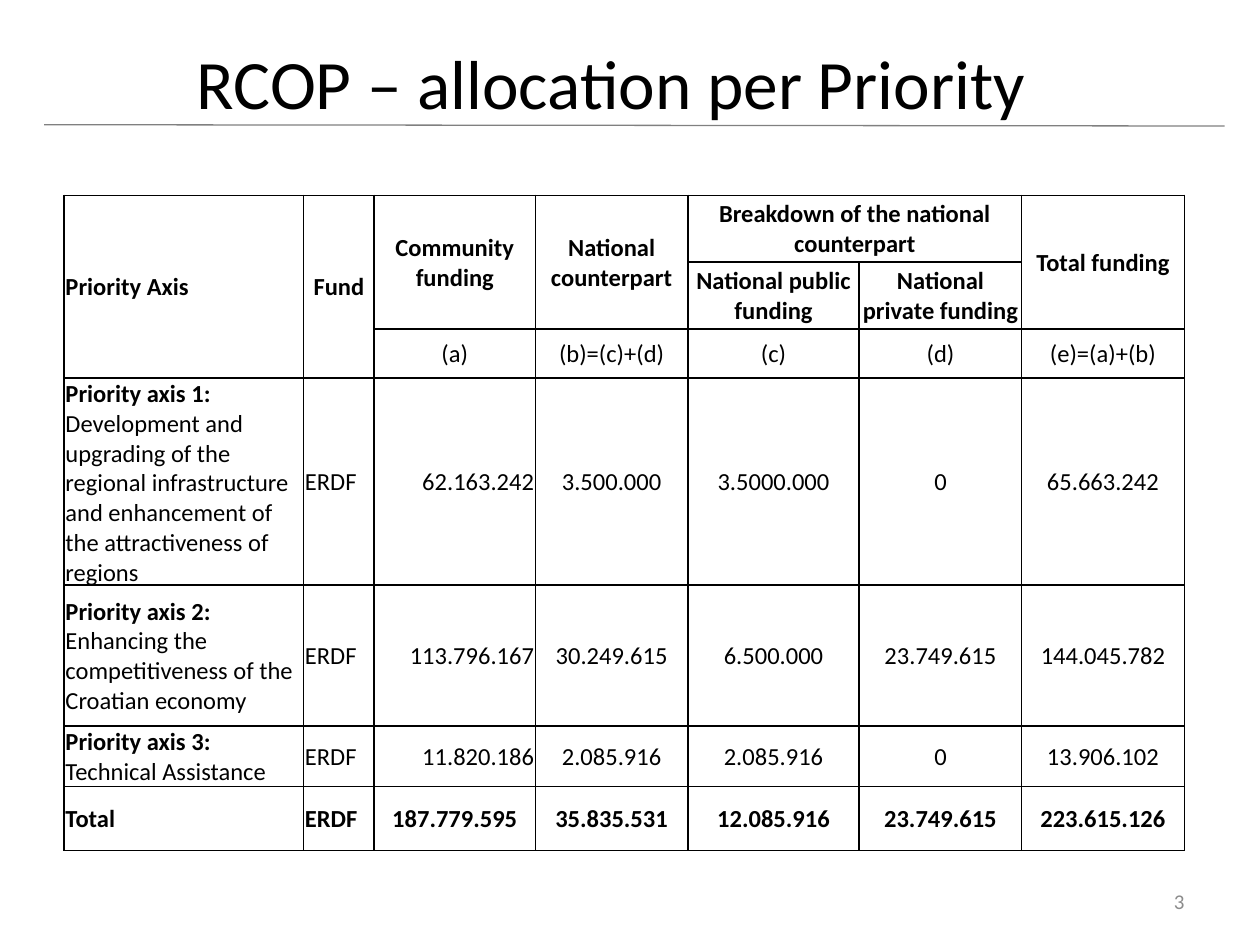
import pptx
import pptx.dml.color
import pptx.enum.shapes
import pptx.enum.text
import pptx.oxml
import pptx.oxml.ns
import pptx.util
from pptx.util import Inches

Align = pptx.enum.text.PP_ALIGN
BLACK = pptx.dml.color.RGBColor(0x00, 0x00, 0x00)
GRAY = pptx.dml.color.RGBColor(0x80, 0x80, 0x80)
NUMBER_GRAY = pptx.dml.color.RGBColor(0x8C, 0x8C, 0x8C)
FONT = "Calibri"

TITLE = "RCOP – allocation per Priority"
SLIDE_NUMBER = "3"

# Header cells: row, column, rows spanned, columns spanned, label
HEADERS = [
    (0, 0, 3, 1, "Priority Axis"),
    (0, 1, 3, 1, "Fund"),
    (0, 2, 2, 1, "Community funding"),
    (0, 3, 2, 1, "National counterpart"),
    (0, 4, 1, 2, "Breakdown of the national counterpart"),
    (0, 6, 2, 1, "Total funding"),
    (1, 4, 1, 1, "National public funding"),
    (1, 5, 1, 1, "National private funding"),
]
FORMULAS = ["(a)", "(b)=(c)+(d)", "(c)", "(d)", "(e)=(a)+(b)"]
# Axis label, axis description, fund, then amounts (a) to (e)
AXES = [
    ("Priority axis 1: ",
     "Development and upgrading of the regional infrastructure and "
     "enhancement of the attractiveness of regions",
     "ERDF", "62.163.242", "3.500.000", "3.5000.000", "0", "65.663.242"),
    ("Priority axis 2: ",
     "Enhancing the competitiveness of the Croatian economy",
     "ERDF", "113.796.167", "30.249.615", "6.500.000", "23.749.615", "144.045.782"),
    ("Priority axis 3: ", "Technical Assistance",
     "ERDF", "11.820.186", "2.085.916", "2.085.916", "0", "13.906.102"),
]
TOTALS = ["Total", "ERDF", "187.779.595", "35.835.531", "12.085.916",
          "23.749.615", "223.615.126"]
COLUMN_WIDTHS = [1.9, 0.56, 1.28, 1.21, 1.36, 1.29, 1.29]
ROW_HEIGHTS = [0.53, 0.53, 0.39, 1.49, 1.12, 0.44, 0.51]
FIRST_AXIS_ROW, TOTAL_ROW = 3, 6


def write(frame, text, size=14, color=BLACK, bold=False, align=Align.CENTER):
    """Add a run to the frame's first paragraph and format it."""
    paragraph = frame.paragraphs[0]
    paragraph.alignment = align
    run = paragraph.add_run()
    run.text = text
    run.font.name = FONT
    run.font.size = pptx.util.Pt(size)
    run.font.bold = bold
    run.font.color.rgb = color


def add_text(slide, text, left, top, width, height, **style):
    frame = slide.shapes.add_textbox(
        Inches(left), Inches(top), Inches(width), Inches(height)).text_frame
    frame.word_wrap = True
    frame.vertical_anchor = pptx.enum.text.MSO_ANCHOR.MIDDLE
    write(frame, text, **style)


def add_rule(slide):
    rule = slide.shapes.add_connector(
        pptx.enum.shapes.MSO_CONNECTOR.STRAIGHT,
        Inches(0.35), Inches(0.99), Inches(9.72), Inches(1))
    rule.line.color.rgb = GRAY
    rule.line.width = pptx.util.Pt(0.75)
    properties = rule._element.spPr
    properties.append(properties.makeelement(pptx.oxml.ns.qn("a:effectLst"), {}))


def style_cell(cell):
    """Give a cell thin black borders, tight margins and no fill."""
    properties = cell._tc.get_or_add_tcPr()
    for side in ("lnL", "lnR", "lnT", "lnB"):
        properties.append(pptx.oxml.parse_xml(
            f'<a:{side} {pptx.oxml.ns.nsdecls("a")} w="{pptx.util.Pt(1)}">'
            f'<a:solidFill><a:srgbClr val="{BLACK}"/></a:solidFill></a:{side}>'))
    cell.fill.background()
    cell.margin_left = cell.margin_right = cell.margin_top = Inches(0.01)
    cell.margin_bottom = 0
    cell.vertical_anchor = pptx.enum.text.MSO_ANCHOR.MIDDLE


def add_allocation_table(slide):
    table = slide.shapes.add_table(
        len(ROW_HEIGHTS), len(COLUMN_WIDTHS), Inches(0.51), Inches(1.55),
        Inches(sum(COLUMN_WIDTHS)), Inches(sum(ROW_HEIGHTS))).table
    table.first_row = table.horz_banding = False
    for column, width in zip(table.columns, COLUMN_WIDTHS):
        column.width = Inches(width)
    for row, height in zip(table.rows, ROW_HEIGHTS):
        row.height = Inches(height)
    for cell in table.iter_cells():
        style_cell(cell)

    for row, column, row_span, column_span, label in HEADERS:
        cell = table.cell(row, column)
        if row_span * column_span > 1:
            cell.merge(table.cell(row + row_span - 1, column + column_span - 1))
        write(cell.text_frame, label, bold=True,
              align=Align.CENTER if column else Align.JUSTIFY)
    for column, formula in enumerate(FORMULAS, 2):
        write(table.cell(2, column).text_frame, formula)

    for row, (axis, description, fund, *amounts) in enumerate(AXES, FIRST_AXIS_ROW):
        axis_frame = table.cell(row, 0).text_frame
        write(axis_frame, axis, bold=True, align=Align.LEFT)
        write(axis_frame, description, align=Align.LEFT)
        write(table.cell(row, 1).text_frame, fund, align=Align.JUSTIFY)
        for column, amount in enumerate(amounts, 2):
            write(table.cell(row, column).text_frame, amount,
                  align=Align.RIGHT if column == 2 else Align.CENTER)
    for column, total in enumerate(TOTALS):
        write(table.cell(TOTAL_ROW, column).text_frame, total, bold=True,
              align=Align.JUSTIFY if column < 2 else Align.CENTER)


def main():
    deck = pptx.Presentation()
    deck.slide_width, deck.slide_height = Inches(10), Inches(7.5)
    slide = deck.slides.add_slide(deck.slide_layouts[6])
    add_text(slide, TITLE, 0.35, 0.29, 9, 0.71, size=39.6)
    add_text(slide, SLIDE_NUMBER, 7.17, 6.95, 2.33, 0.4,
             size=12, color=NUMBER_GRAY, align=Align.RIGHT)
    add_rule(slide)
    add_allocation_table(slide)
    deck.save("out.pptx")


if __name__ == "__main__":
    main()
